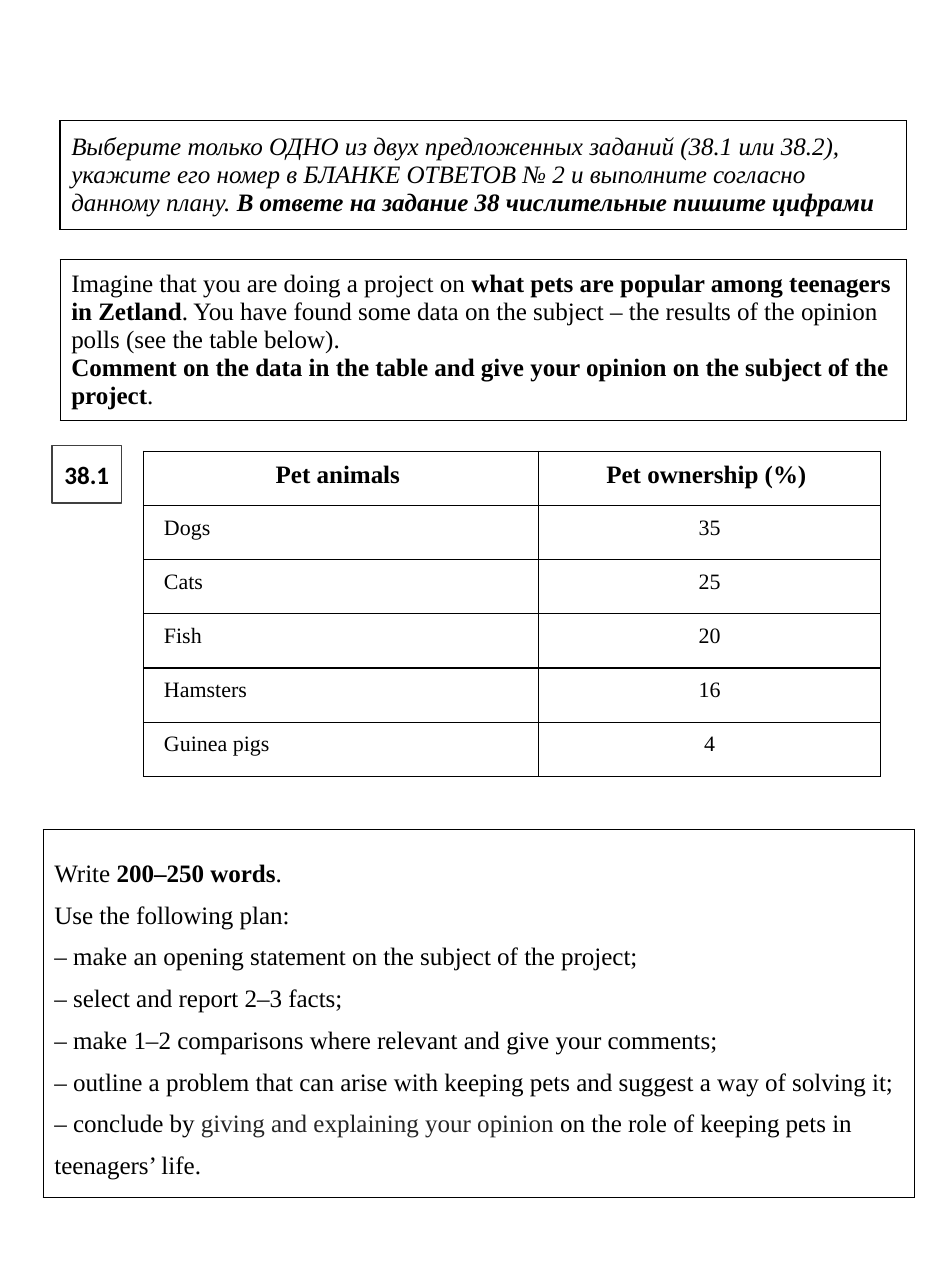
"""Builds an exam task sheet: instructions, a pet ownership table and a writing plan."""
import pptx
import pptx.dml.color
import pptx.enum.shapes
import pptx.enum.text
import pptx.oxml
import pptx.oxml.ns
import pptx.util
from pptx.util import Cm

COLORS = {"text": "000000", "soft": "262626", "paper": "FFFFFF", "frame": "404040"}
SERIF = "Times New Roman"
CENTER = pptx.enum.text.PP_ALIGN.CENTER
LEFT = pptx.enum.text.PP_ALIGN.LEFT
MIDDLE = pptx.enum.text.MSO_ANCHOR.MIDDLE

CHOICE = [
    [("Выберите только ОДНО из двух предложенных заданий (38.1 или 38.2),", "i")],
    [("укажите его номер в БЛАНКЕ ОТВЕТОВ № 2 и выполните согласно данному плану. ", "i"),
     ("В ответе на задание 38 числительные пишите цифрами", "bi")],
]
TASK = [
    [("Imagine that you are doing a project on ", ""),
     ("what pets are popular among teenagers in Zetland", "b"),
     (". You have found some data on the subject – the results of the opinion polls "
      "(see the table below).", "")],
    [("Comment on the data in the table and give your opinion on the subject of the project", "b"),
     (".", "")],
]
PLAN = [
    [("Write ", ""), ("200–250 words", "b"), (".", "")],
    [("Use the following plan:", "")],
    [("– make an opening statement on the subject of the project;", "")],
    [("– select and report 2–3 facts;", "")],
    [("– make 1–2 comparisons where relevant and give your comments;", "")],
    [("– outline a problem that can arise with keeping pets and suggest a way of solving it;", "")],
    [("– conclude by ", ""), ("giving and explaining your opinion ", "s"),
     ("on the role of keeping pets in teenagers’ life.", "")],
]
PETS = [
    ("Pet animals ", "Pet ownership (%) "),
    ("Dogs", "35"),
    ("Cats", "25"),
    ("Fish", "20"),
    ("Hamsters", "16"),
    ("Guinea pigs", "4"),
]


def rgb(name):
    """Return the named colour."""
    return pptx.dml.color.RGBColor.from_string(COLORS[name])


def style_run(run, size=16, bold=False, italic=False, color="text", font=SERIF):
    """Give a run its font, size, weight and colour."""
    run.font.name = font
    run.font.size = pptx.util.Pt(size)
    run.font.bold = bold
    run.font.italic = italic
    run.font.color.rgb = rgb(color)


def frame_cell(cell, width):
    """Draw solid black borders of the given width in points around an unfilled cell."""
    properties = cell._tc.get_or_add_tcPr()
    for side in "LRTB":
        properties.append(pptx.oxml.parse_xml(
            f'<a:ln{side} {pptx.oxml.ns.nsdecls("a")} w="{pptx.util.Pt(width)}">'
            f'<a:solidFill><a:srgbClr val="{COLORS["text"]}"/></a:solidFill></a:ln{side}>'))
    cell.fill.background()


def add_plain_table(slide, left, top, columns, row_height, rows, border):
    """Add a framed table without style effects and return it."""
    table = slide.shapes.add_table(rows, len(columns), left, top,
                                   sum(columns), row_height * rows).table
    table.first_row = rows > 1
    table.horz_banding = False
    for column, width in zip(table.columns, columns):
        column.width = width
    for cell in table.iter_cells():
        frame_cell(cell, border)
    return table


def add_text_panel(slide, left, top, width, height, paragraphs, border, spacing=1.0):
    """Add a one-cell table holding rich paragraphs (b bold, i italic, s soft colour)."""
    cell = add_plain_table(slide, left, top, [width], height, 1, border).cell(0, 0)
    cell.vertical_anchor = MIDDLE
    for index, pieces in enumerate(paragraphs):
        frame = cell.text_frame
        paragraph = frame.add_paragraph() if index else frame.paragraphs[0]
        paragraph.line_spacing = spacing
        for wording, marks in pieces:
            run = paragraph.add_run()
            run.text = wording
            style_run(run, bold="b" in marks, italic="i" in marks,
                      color="soft" if "s" in marks else "text")


def add_task_number(slide, number):
    """Add the framed task number beside the pet table."""
    badge = slide.shapes.add_shape(pptx.enum.shapes.MSO_SHAPE.RECTANGLE,
                                   Cm(1.17), Cm(10.03), Cm(1.57), Cm(1.3))
    badge.shadow.inherit = False
    badge.fill.solid()
    badge.fill.fore_color.rgb = rgb("paper")
    badge.line.color.rgb = rgb("frame")
    badge.line.width = pptx.util.Pt(1)
    badge.text_frame.text = number
    badge.text_frame.vertical_anchor = MIDDLE
    paragraph = badge.text_frame.paragraphs[0]
    paragraph.alignment = CENTER
    style_run(paragraph.runs[0], bold=True, font="Calibri")


def add_pet_table(slide):
    """Add the table of pet ownership."""
    table = add_plain_table(slide, Cm(3.23), Cm(10.16), [Cm(8.89), Cm(7.7)],
                            Cm(1.22), len(PETS), 1)
    for row, values in enumerate(PETS):
        for column, value in enumerate(values):
            header = row == 0
            cell = table.cell(row, column)
            cell.margin_left = cell.margin_right = Cm(0.46)
            cell.margin_top = cell.margin_bottom = Cm(0.23)
            cell.text_frame.text = value
            paragraph = cell.text_frame.paragraphs[0]
            paragraph.alignment = CENTER if header or column else LEFT
            style_run(paragraph.runs[0], size=16 if header else 14, bold=header)


def main():
    """Build and save the sheet."""
    presentation = pptx.Presentation()
    presentation.slide_width = Cm(21)
    presentation.slide_height = Cm(29)
    slide = presentation.slides.add_slide(presentation.slide_layouts[6])
    add_text_panel(slide, Cm(1.35), Cm(2.72), Cm(19.05), Cm(2.44), CHOICE, 1)
    add_text_panel(slide, Cm(1.35), Cm(5.84), Cm(19.05), Cm(3.63), TASK, 0.5)
    add_text_panel(slide, Cm(0.97), Cm(18.67), Cm(19.61), Cm(8.28), PLAN, 0.5, spacing=1.5)
    add_task_number(slide, "38.1")
    add_pet_table(slide)
    presentation.save("out.pptx")


if __name__ == "__main__":
    main()
